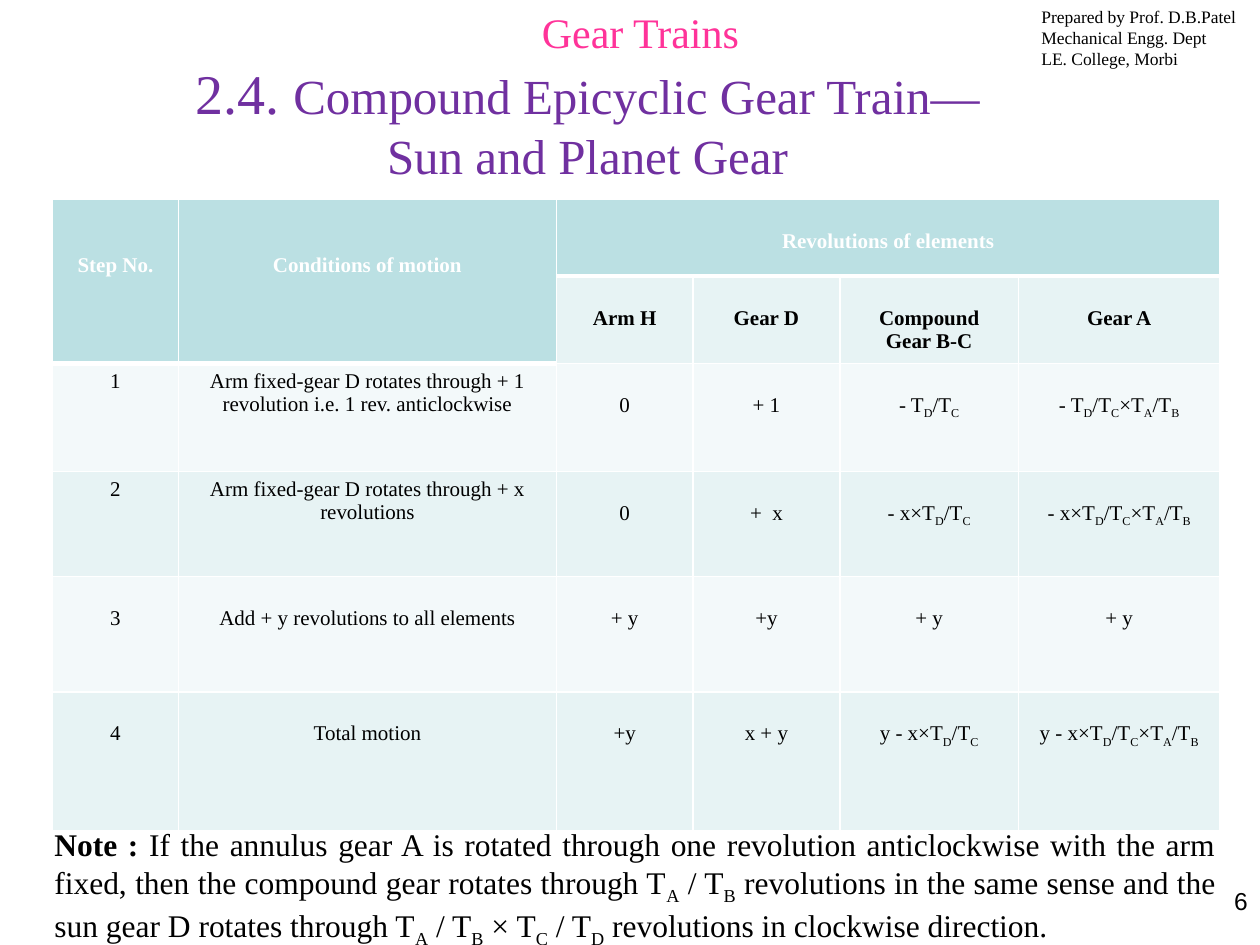
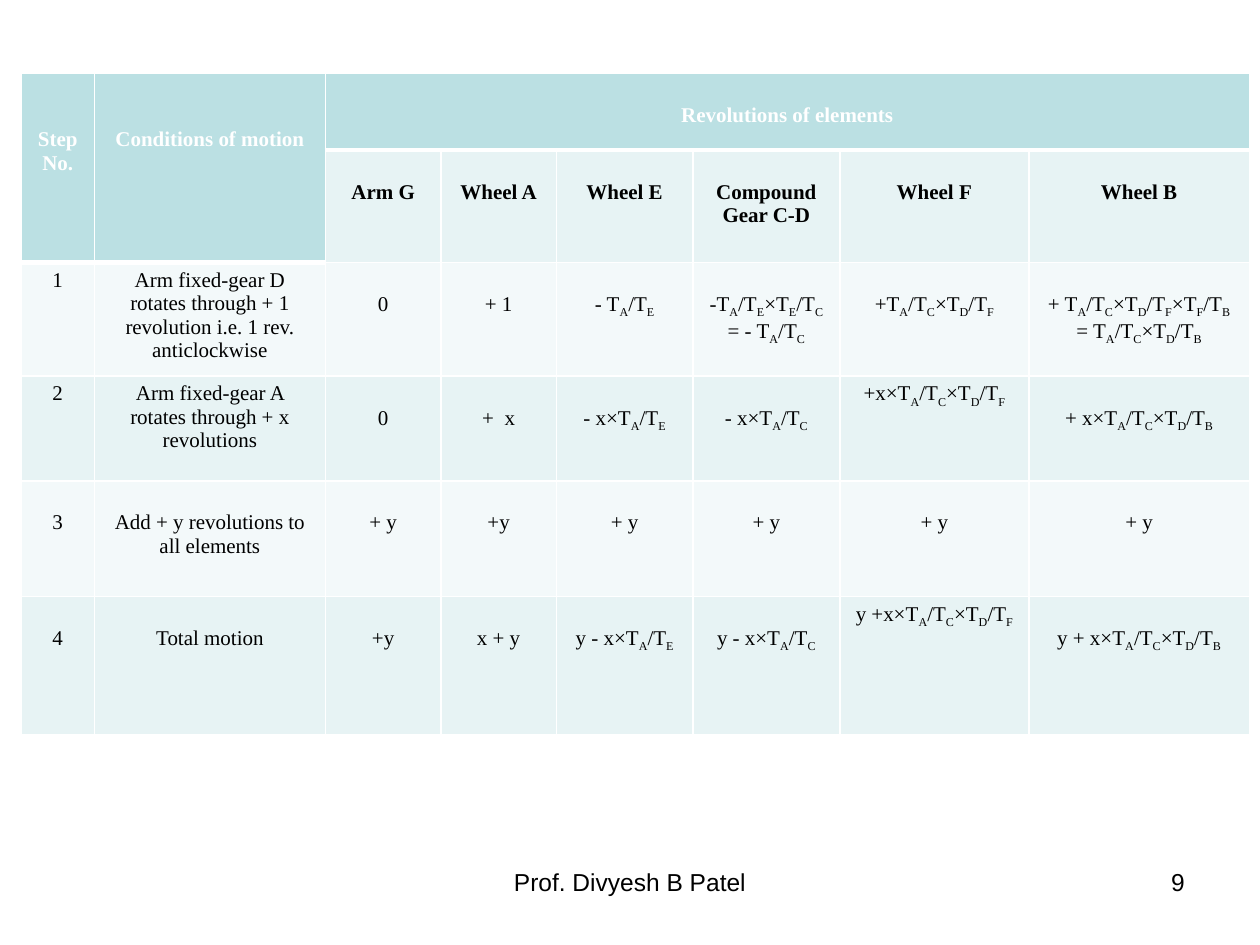
"""Build two slides of revolution tables for epicyclic gear trains."""
from dataclasses import dataclass, replace

from lxml.etree import SubElement
from pptx import Presentation
from pptx.dml.color import RGBColor
from pptx.enum.text import PP_ALIGN
from pptx.oxml.ns import qn
from pptx.util import Inches, Pt

BLACK = RGBColor(0x00, 0x00, 0x00)
WHITE = RGBColor(0xFF, 0xFF, 0xFF)
PINK = RGBColor(0xFF, 0x33, 0x99)
PURPLE = RGBColor(0x70, 0x30, 0xA0)
HEADER_TEAL = RGBColor(0xBB, 0xE0, 0xE3)
BAND_TEAL = RGBColor(0xE7, 0xF3, 0xF4)
BAND_PALE = RGBColor(0xF3, 0xF9, 0xFA)

SLIDE_WIDTH, SLIDE_HEIGHT = Inches(10), Inches(7.5)
GRID_COLUMNS = 120
UNIT = SLIDE_WIDTH / GRID_COLUMNS
CELL_INSET = 0.6
LINE_HEIGHT = 2.3
HEADER_ROWS = 2
LABEL_COLUMNS = 2


@dataclass(frozen=True)
class Style:
    size: float
    color: RGBColor = BLACK
    font: str = "Times New Roman"
    bold: bool = False


@dataclass(frozen=True)
class Caption:
    left: float
    top: float
    width: float
    height: float
    paragraphs: list[list[tuple[str, Style]]]
    align: PP_ALIGN = PP_ALIGN.LEFT
    wrap: bool = True


@dataclass(frozen=True)
class MotionTable:
    left: float
    top: float
    columns: list[float]
    rows: list[float]
    elements: list[str]
    steps: list[list[str]]
    raised: set[tuple[int, int]]


FOOTER = Style(14, font="Arial")
CREDIT = Style(10)
HEADING = Style(28, PURPLE)
NOTE = Style(18)
CELL = Style(12)
CELL_BOLD = replace(CELL, bold=True)
CELL_HEADER = replace(CELL_BOLD, color=WHITE)

SUN_AND_PLANET_CAPTIONS = [
    Caption(28, 0, 66, 6, [[("Gear Trains", Style(24, PINK))]], PP_ALIGN.CENTER),
    Caption(98, 0, 22, 7.3, [
        [(line, CREDIT)] for line in
        ("Prepared by Prof. D.B.Patel", "Mechanical Engg. Dept", "LE. College, Morbi")
    ]),
    Caption(92, 83.8, 28, 6.2, [[("6", FOOTER)]], PP_ALIGN.RIGHT),
    Caption(17, 5, 77.9, 13.3, [
        [("2.4. ", replace(HEADING, size=32)),
         ("Compound Epicyclic Gear Train—", HEADING)],
        [("Sun and Planet Gear", HEADING)],
    ], PP_ALIGN.CENTER, wrap=False),
    Caption(4, 78, 113, 12.1, [[
        ("Note : ", replace(NOTE, bold=True)),
        ("If the annulus gear A is rotated through one revolution anticlockwise "
         "with the arm fixed, then the compound gear rotates through T_A / T_B "
         "revolutions in the same sense and the sun gear D rotates through "
         "T_A / T_B × T_C / T_D revolutions in clockwise direction.", NOTE),
    ]], PP_ALIGN.JUSTIFY),
]

SUN_AND_PLANET_TABLE = MotionTable(
    5, 19,
    columns=[12, 36, 13, 14, 17, 19.2],
    rows=[7.3, 8.3, 10.3, 10, 11, 13.2],
    elements=["Arm H", "Gear D", "Compound\nGear B-C", "Gear A"],
    steps=[
        ["1", "Arm fixed-gear D rotates through + 1\nrevolution i.e. 1 rev. anticlockwise",
         "0", "+ 1", "- T_D/T_C", "- T_D/T_C×T_A/T_B"],
        ["2", "Arm fixed-gear D rotates through + x\nrevolutions",
         "0", "+  x", "- x×T_D/T_C", "- x×T_D/T_C×T_A/T_B"],
        ["3", "Add + y revolutions to all elements", "+ y", "+y", "+ y", "+ y"],
        ["4", "Total motion", "+y", "x + y", "y - x×T_D/T_C", "y - x×T_D/T_C×T_A/T_B"],
    ],
    raised={(2, 0), (2, 1), (3, 0), (3, 1)},
)

WHEEL_CAPTIONS = [
    Caption(41, 82, 38, 6.2, [[("Prof. Divyesh B Patel", FOOTER)]], PP_ALIGN.CENTER),
    Caption(86, 82, 28, 6.2, [[("9", FOOTER)]], PP_ALIGN.RIGHT),
]

WHEEL_TABLE = MotionTable(
    2, 7,
    columns=[7, 22, 11, 11, 13, 14, 18, 21],
    rows=[7.3, 10.7, 10.8, 10, 11, 13.2],
    elements=["Arm G", "Wheel A", "Wheel E", "Compound\nGear C-D", "Wheel F", "Wheel B"],
    steps=[
        ["1", "Arm fixed-gear D rotates through + 1 revolution i.e. 1 rev. anticlockwise",
         "0", "+ 1", "- T_A/T_E", "-T_A/T_E×T_E/T_C = - T_A/T_C",
         "+T_A/T_C×T_D/T_F", "+ T_A/T_C×T_D/T_F×T_F/T_B = T_A/T_C×T_D/T_B"],
        ["2", "Arm fixed-gear A rotates through + x revolutions",
         "0", "+  x", "- x×T_A/T_E", "- x×T_A/T_C",
         "+x×T_A/T_C×T_D/T_F", "+ x×T_A/T_C×T_D/T_B"],
        ["3", "Add + y revolutions to all elements",
         "+ y", "+y", "+ y", "+ y", "+ y", "+ y"],
        ["4", "Total motion", "+y", "x + y", "y - x×T_A/T_E", "y - x×T_A/T_C",
         "y +x×T_A/T_C×T_D/T_F", "y + x×T_A/T_C×T_D/T_B"],
    ],
    raised={(2, 0), (2, 1), (3, 0), (3, 1), (3, 6), (5, 6)},
)


def grid(units: float) -> int:
    return round(units * UNIT)


def add_run(paragraph, text: str, style: Style, subscript: bool = False) -> None:
    if not text:
        return
    run = paragraph.add_run()
    run.text = text
    run.font.size = Pt(style.size)
    run.font.name = style.font
    run.font.bold = style.bold
    run.font.color.rgb = style.color
    if subscript:
        run._r.get_or_add_rPr().set("baseline", "-25000")


def add_formula(paragraph, text: str, style: Style) -> None:
    start, *indexed = text.split("_")
    add_run(paragraph, start, style)
    for part in indexed:
        add_run(paragraph, part[0], style, subscript=True)
        add_run(paragraph, part[1:], style)


def write(frame, paragraphs: list[list[tuple[str, Style]]], align: PP_ALIGN) -> None:
    for number, spans in enumerate(paragraphs):
        paragraph = frame.add_paragraph() if number else frame.paragraphs[0]
        paragraph.alignment = align
        for text, style in spans:
            add_formula(paragraph, text, style)


def draw_caption(slide, caption: Caption) -> None:
    box = slide.shapes.add_textbox(
        *map(grid, (caption.left, caption.top, caption.width, caption.height)))
    box.text_frame.word_wrap = caption.wrap
    write(box.text_frame, caption.paragraphs, caption.align)


def paint_cell(cell, fill: RGBColor, bottom_width: float) -> None:
    properties = cell._tc.get_or_add_tcPr()
    for side, width in (("L", 1), ("R", 1), ("T", 1), ("B", bottom_width)):
        border = SubElement(properties, qn(f"a:ln{side}"), w=str(Pt(width)))
        line_fill = SubElement(border, qn("a:solidFill"))
        SubElement(line_fill, qn("a:srgbClr"), val=str(WHITE))
    cell.fill.solid()
    cell.fill.fore_color.rgb = fill


def fill_cell(cell, text: str, style: Style, lines_down: int) -> None:
    cell.margin_top = grid(CELL_INSET + lines_down * LINE_HEIGHT)
    write(cell.text_frame, [[(line, style)] for line in text.split("\n")], PP_ALIGN.CENTER)


def draw_table(slide, motion: MotionTable) -> None:
    row_count, column_count = len(motion.rows), len(motion.columns)
    table = slide.shapes.add_table(
        row_count, column_count, grid(motion.left), grid(motion.top),
        grid(sum(motion.columns)), grid(sum(motion.rows))).table
    table.first_row = table.horz_banding = False
    for column, width in zip(table.columns, motion.columns):
        column.width = grid(width)
    for row, height in zip(table.rows, motion.rows):
        row.height = grid(height)

    for row in range(row_count):
        for column in range(column_count):
            header = row == 0 or (row < HEADER_ROWS and column < LABEL_COLUMNS)
            band = BAND_TEAL if row % 2 else BAND_PALE
            paint_cell(table.cell(row, column), HEADER_TEAL if header else band,
                       3 if header else 1)

    for column, label in enumerate(("Step No.", "Conditions of motion")):
        table.cell(0, column).merge(table.cell(HEADER_ROWS - 1, column))
        fill_cell(table.cell(0, column), label, CELL_HEADER, 2)
    table.cell(0, LABEL_COLUMNS).merge(table.cell(0, column_count - 1))
    fill_cell(table.cell(0, LABEL_COLUMNS), "Revolutions of elements", CELL_HEADER, 1)
    for column, element in enumerate(motion.elements, LABEL_COLUMNS):
        fill_cell(table.cell(1, column), element, CELL_BOLD, 1)
    for row, step in enumerate(motion.steps, HEADER_ROWS):
        for column, entry in enumerate(step):
            fill_cell(table.cell(row, column), entry, CELL,
                      0 if (row, column) in motion.raised else 1)


def main() -> None:
    deck = Presentation()
    deck.slide_width, deck.slide_height = SLIDE_WIDTH, SLIDE_HEIGHT
    for captions, motion in ((SUN_AND_PLANET_CAPTIONS, SUN_AND_PLANET_TABLE),
                             (WHEEL_CAPTIONS, WHEEL_TABLE)):
        slide = deck.slides.add_slide(deck.slide_layouts[6])
        draw_table(slide, motion)
        for caption in captions:
            draw_caption(slide, caption)
    deck.save("out.pptx")


if __name__ == "__main__":
    main()
